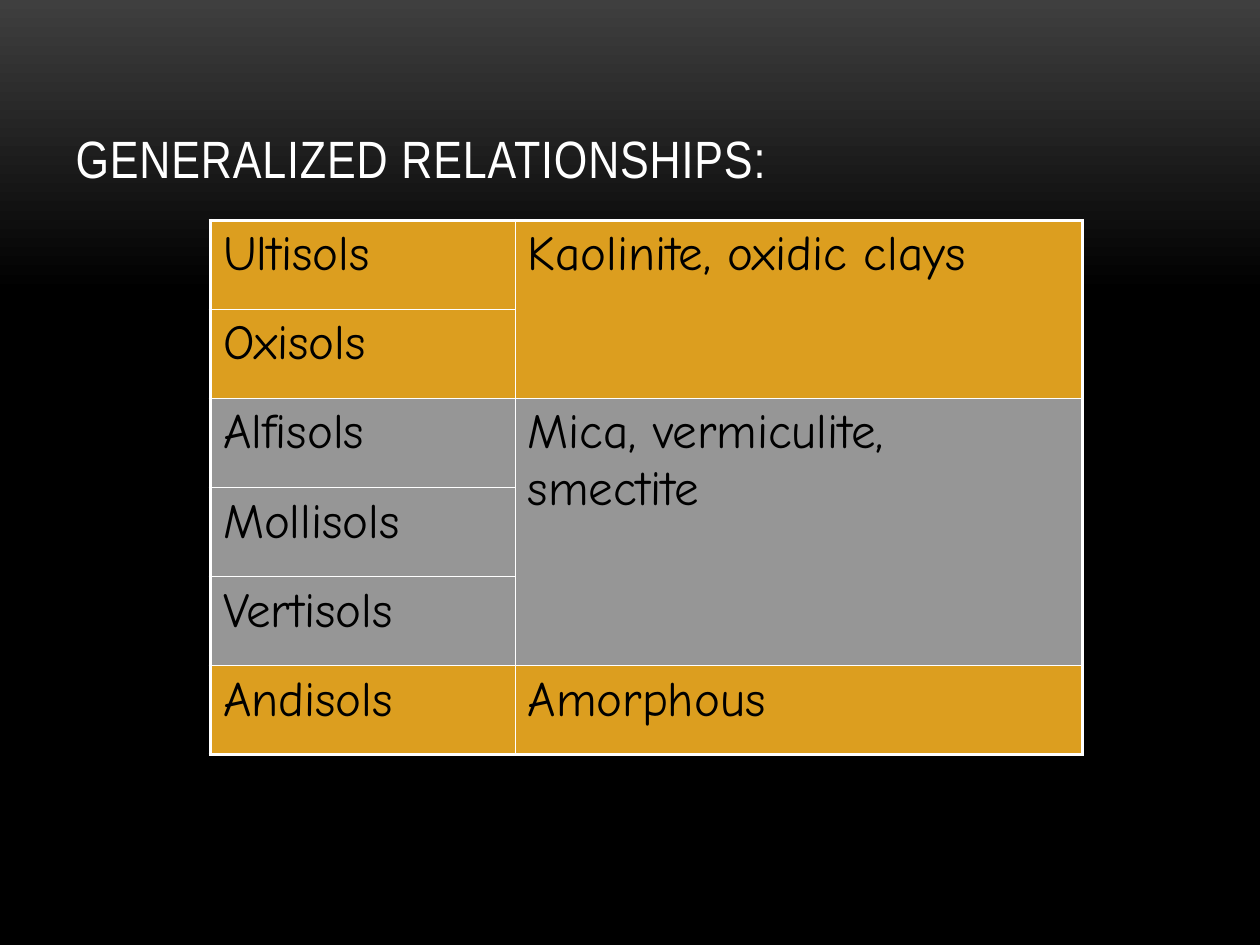
from lxml import etree
from pptx import Presentation
from pptx.dml.color import RGBColor
from pptx.enum.text import MSO_ANCHOR, MSO_AUTO_SIZE, PP_ALIGN
from pptx.oxml.ns import qn
from pptx.util import Pt

BOTTOM = MSO_ANCHOR.BOTTOM
LEFT = PP_ALIGN.LEFT
NO_AUTOFIT = MSO_AUTO_SIZE.NONE
TITLE_ONLY = 5

THEME = {
    "white": "FFFFFF",
    "black": "000000",
    "charcoal": "3F3F3F",
    "gold": "DC9E1F",
    "grey": "969696",
    "title_font": "Arial Narrow",
    "table_font": "Comic Neue",
    "title_size": 30,
    "table_size": 28,
    "outer_line": 2.25,
    "inner_line": 1,
}

# Soil orders that share a clay mineralogy, with the fill of their band
SOIL_GROUPS = [
    (["Ultisols", "Oxisols"], "Kaolinite, oxidic clays", "gold"),
    (["Alfisols", "Mollisols", "Vertisols"], "Mica, vermiculite, smectite", "grey"),
    (["Andisols"], "Amorphous", "gold"),
]
COLUMN_WIDTHS = [174.2, 324]
ROW_HEIGHT = 50.9


def color(name):
    return RGBColor.from_string(THEME[name])


def add_border(cell, side, width):
    """Draw one cell edge; side is L, R, T or B. Call before filling the cell."""
    line = etree.SubElement(cell._tc.get_or_add_tcPr(), qn(f"a:ln{side}"), w=str(Pt(width)))
    fill = etree.SubElement(line, qn("a:solidFill"))
    etree.SubElement(fill, qn("a:srgbClr"), val=THEME["white"])


prs = Presentation()
prs.slide_width = Pt(720)
prs.slide_height = Pt(540)
slide = prs.slides.add_slide(prs.slide_layouts[TITLE_ONLY])

# Background fades from charcoal to black in the top third
backdrop = slide.background.fill
backdrop.gradient()
backdrop.gradient_angle = 270
for stop, (position, shade) in zip(backdrop.gradient_stops, [(0, "charcoal"), (0.31, "black")]):
    stop.position = position
    stop.color.rgb = color(shade)

# Title
title = slide.shapes.title
title.left, title.top, title.width, title.height = Pt(36), Pt(21.6), Pt(648), Pt(90)
title.text_frame.text = "GENERALIZED RELATIONSHIPS:"
title.text_frame.vertical_anchor = BOTTOM
title.text_frame.auto_size = NO_AUTOFIT
heading = title.text_frame.paragraphs[0]
heading.alignment = LEFT
heading.font.name = THEME["title_font"]
heading.font.size = Pt(THEME["title_size"])
heading.font.color.rgb = color("white")
heading.runs[0].font._element.set("spc", "50")

# Table of soil orders and their clays
row_count = sum(len(orders) for orders, _, _ in SOIL_GROUPS)
soils = slide.shapes.add_table(
    row_count, len(COLUMN_WIDTHS), Pt(120.24), Pt(126),
    Pt(sum(COLUMN_WIDTHS)), Pt(row_count * ROW_HEIGHT)).table
soils.first_row = False
soils.horz_banding = False
for column, width in zip(soils.columns, COLUMN_WIDTHS):
    column.width = Pt(width)
for row in soils.rows:
    row.height = Pt(ROW_HEIGHT)

first = 0
for orders, clays, band in SOIL_GROUPS:
    last = first + len(orders) - 1
    for r, order in enumerate(orders, first):
        soils.cell(r, 0).text = order
        for c in range(2):
            cell = soils.cell(r, c)
            on_edge = {"L": c == 0, "R": c == 1, "T": r == 0, "B": r == row_count - 1}
            for side, outer in on_edge.items():
                add_border(cell, side, THEME["outer_line" if outer else "inner_line"])
            cell.fill.solid()
            cell.fill.fore_color.rgb = color(band)
    soils.cell(first, 1).text = clays
    if last > first:
        soils.cell(first, 1).merge(soils.cell(last, 1))
    first = last + 1

for cell in soils.iter_cells():
    paragraph = cell.text_frame.paragraphs[0]
    paragraph.space_before = Pt(0.2 * THEME["table_size"])
    paragraph.font.name = THEME["table_font"]
    paragraph.font.size = Pt(THEME["table_size"])
    paragraph.font.color.rgb = color("black")

prs.save("out.pptx")
